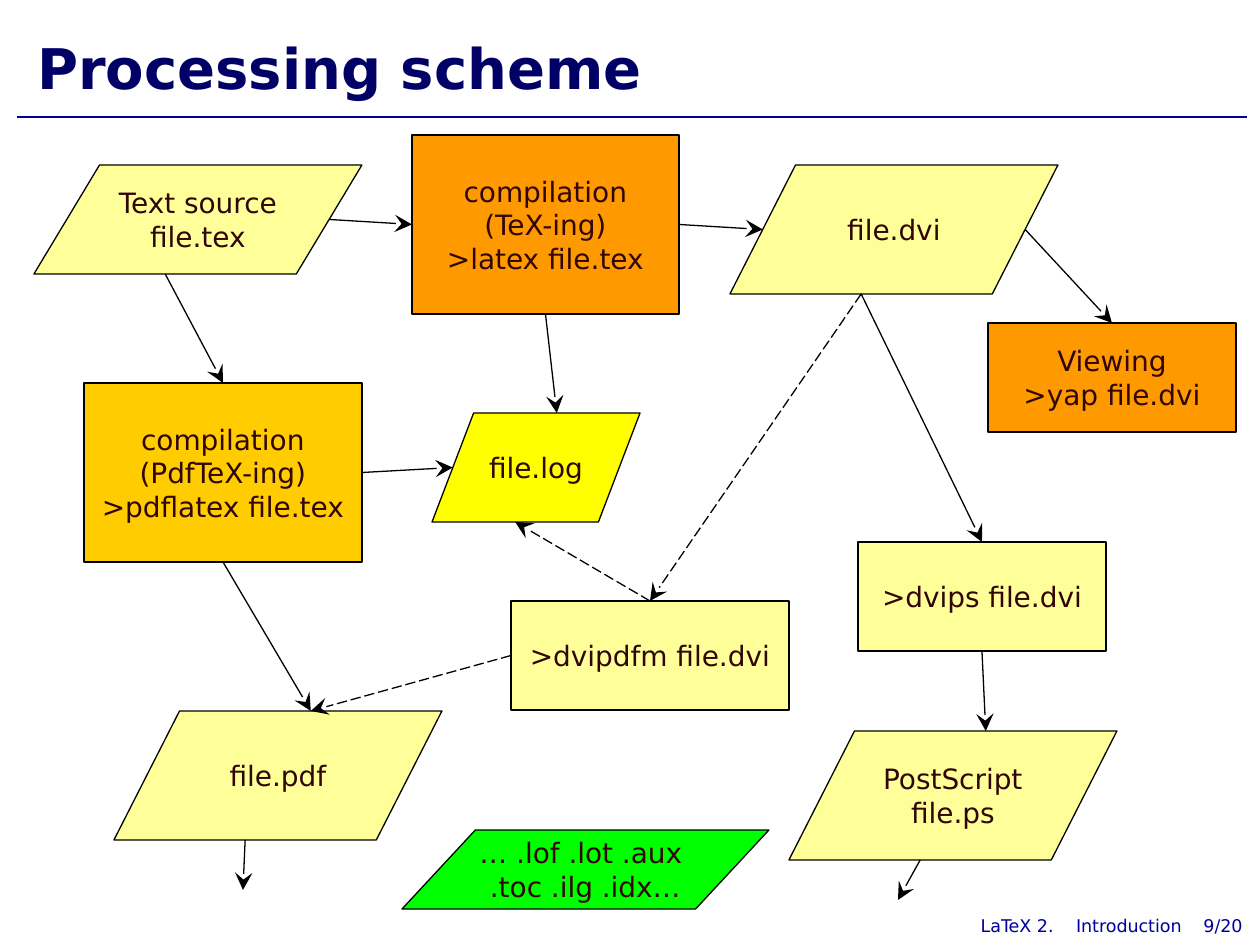
"""Build the LaTeX processing scheme slide as a connected flowchart."""
from dataclasses import dataclass

from lxml.etree import SubElement
from pptx import Presentation
from pptx.dml.color import RGBColor
from pptx.enum.dml import MSO_LINE_DASH_STYLE as DASH
from pptx.enum.shapes import MSO_CONNECTOR, MSO_SHAPE as SHAPE
from pptx.enum.text import MSO_ANCHOR as ANCHOR, PP_ALIGN as ALIGN
from pptx.oxml.ns import qn
from pptx.util import Inches, Pt


@dataclass(frozen=True)
class Theme:
    font: str = "DejaVu Sans"
    title: str = "000066"
    accent: str = "000099"
    ink: str = "300606"
    outline: str = "010000"
    pale: str = "FFFF99"
    orange: str = "FF9900"
    amber: str = "FFCC00"
    yellow: str = "FFFF00"
    green: str = "00FF00"
    title_size: int = 32
    node_size: int = 16
    footer_size: int = 10
    line_width: float = 0.75


THEME = Theme()
PX = Inches(1) / 126
STEP, DATA = SHAPE.FLOWCHART_PROCESS, SHAPE.FLOWCHART_DATA
TOP, LEFT, BOTTOM, RIGHT = range(4)
SIDES = {
    STEP: [(0.5, 0), (0, 0.5), (0.5, 1), (1, 0.5)],
    DATA: [(0.6, 0), (0.1, 0.5), (0.4, 1), (0.9, 0.5)],
}

TITLE = "Processing scheme"
FOOTER = [("LaTeX 2.", 1053), ("Introduction", 1181), ("9/20", 1242)]
NODES = {
    "latex": (STEP, THEME.orange, (412, 135, 267, 179),
              "compilation\n(TeX-ing)\v>latex file.tex"),
    "tex": (DATA, THEME.pale, (34, 165, 328, 109), "Text source\nfile.tex"),
    "dvi": (DATA, THEME.pale, (730, 165, 328, 129), "file.dvi"),
    "pdflatex": (STEP, THEME.amber, (84, 383, 278, 179),
                 "compilation\n(PdfTeX-ing)\v>pdflatex file.tex"),
    "viewing": (STEP, THEME.orange, (988, 323, 248, 109), "Viewing\v>yap file.dvi"),
    "dvips": (STEP, THEME.pale, (858, 542, 248, 109), ">dvips file.dvi"),
    "ps": (DATA, THEME.pale, (789, 731, 328, 129), "PostScript\vfile.ps"),
    "pdf": (DATA, THEME.pale, (114, 711, 328, 129), "file.pdf"),
    "log": (DATA, THEME.yellow, (432, 413, 208, 109), "file.log"),
    "dvipdfm": (STEP, THEME.pale, (511, 601, 278, 109), ">dvipdfm file.dvi"),
    "aux": (DATA, THEME.green, (402, 830, 367, 79),
            "… .lof .lot .aux \v.toc .ilg .idx…"),
}
SOLID_ARROWS = [
    (("tex", RIGHT), ("latex", LEFT)),
    (("latex", RIGHT), ("dvi", LEFT)),
    (("tex", BOTTOM), ("pdflatex", TOP)),
    (("pdflatex", BOTTOM), ("pdf", TOP)),
    (("dvi", BOTTOM), ("dvips", TOP)),
    (("dvips", BOTTOM), ("ps", TOP)),
    (("dvi", RIGHT), ("viewing", TOP)),
    (("pdflatex", RIGHT), ("log", LEFT)),
    (("latex", BOTTOM), ("log", TOP)),
    (("pdf", BOTTOM), (243, 890)),
    (("ps", BOTTOM), (898, 900)),
]
DASHED_ARROWS = [
    (("dvipdfm", LEFT), ("pdf", TOP)),
    (("dvi", BOTTOM), ("dvipdfm", TOP)),
    (("dvipdfm", TOP), ("log", BOTTOM)),
]


def emu(*lengths):
    return [round(length * PX) for length in lengths]


def write(shape, text, size, color, align, anchor=ANCHOR.MIDDLE, bold=False, wrap=True):
    frame = shape.text_frame
    frame.text = text
    frame.word_wrap = wrap
    frame.vertical_anchor = anchor
    for paragraph in frame.paragraphs:
        paragraph.alignment = align
        for run in paragraph.runs:
            run.font.name = THEME.font
            run.font.size = Pt(size)
            run.font.bold = bold
            run.font.color.rgb = RGBColor.from_string(color)
    return frame


def add_node(slide, kind, fill, box, text):
    shape = slide.shapes.add_shape(kind, *emu(*box))
    shape.shadow.inherit = False
    shape.fill.solid()
    shape.fill.fore_color.rgb = RGBColor.from_string(fill)
    shape.line.color.rgb = RGBColor.from_string(THEME.outline)
    shape.line.width = Pt(THEME.line_width)
    write(shape, text, THEME.node_size, THEME.ink, ALIGN.CENTER, wrap=False)
    return shape


def add_line(slide, start, end, color):
    line = slide.shapes.add_connector(MSO_CONNECTOR.STRAIGHT, *emu(*start, *end))
    line.line.color.rgb = RGBColor.from_string(color)
    line.line.width = Pt(THEME.line_width)
    SubElement(line._element.spPr, qn("a:effectLst"))
    return line


def locate(end):
    if end[0] not in NODES:
        return end
    name, side = end
    kind, _, (left, top, width, height), _ = NODES[name]
    across, down = SIDES[kind][side]
    return left + across * width, top + down * height


def add_arrow(slide, shapes, start, end, dashed):
    arrow = add_line(slide, locate(start), locate(end), THEME.outline)
    if dashed:
        arrow.line.dash_style = DASH.LONG_DASH
    SubElement(arrow.line._get_or_add_ln(), qn("a:tailEnd"), type="stealth", w="lg", len="lg")
    for (name, side), connect in ((start, arrow.begin_connect), (end, arrow.end_connect)):
        if name in NODES and NODES[name][0] == STEP:
            connect(shapes[name], side)


def main():
    presentation = Presentation()
    presentation.slide_width, presentation.slide_height = emu(1260, 945)
    slide = presentation.slides.add_slide(presentation.slide_layouts[6])

    add_line(slide, (17, 117), (1247, 117), THEME.accent)
    title = slide.shapes.add_textbox(*emu(25, 16, 1221, 89))
    frame = write(title, TITLE, THEME.title_size, THEME.title, ALIGN.LEFT, ANCHOR.BOTTOM, True)
    frame.paragraphs[0].line_spacing = 0.7
    for text, right in FOOTER:
        box = slide.shapes.add_textbox(*emu(right - 137, 910, 150, 32))
        write(box, text, THEME.footer_size, THEME.accent, ALIGN.RIGHT)

    shapes = {name: add_node(slide, *node) for name, node in NODES.items()}
    for arrows, dashed in ((SOLID_ARROWS, False), (DASHED_ARROWS, True)):
        for start, end in arrows:
            add_arrow(slide, shapes, start, end, dashed)
    presentation.save("out.pptx")


if __name__ == "__main__":
    main()
